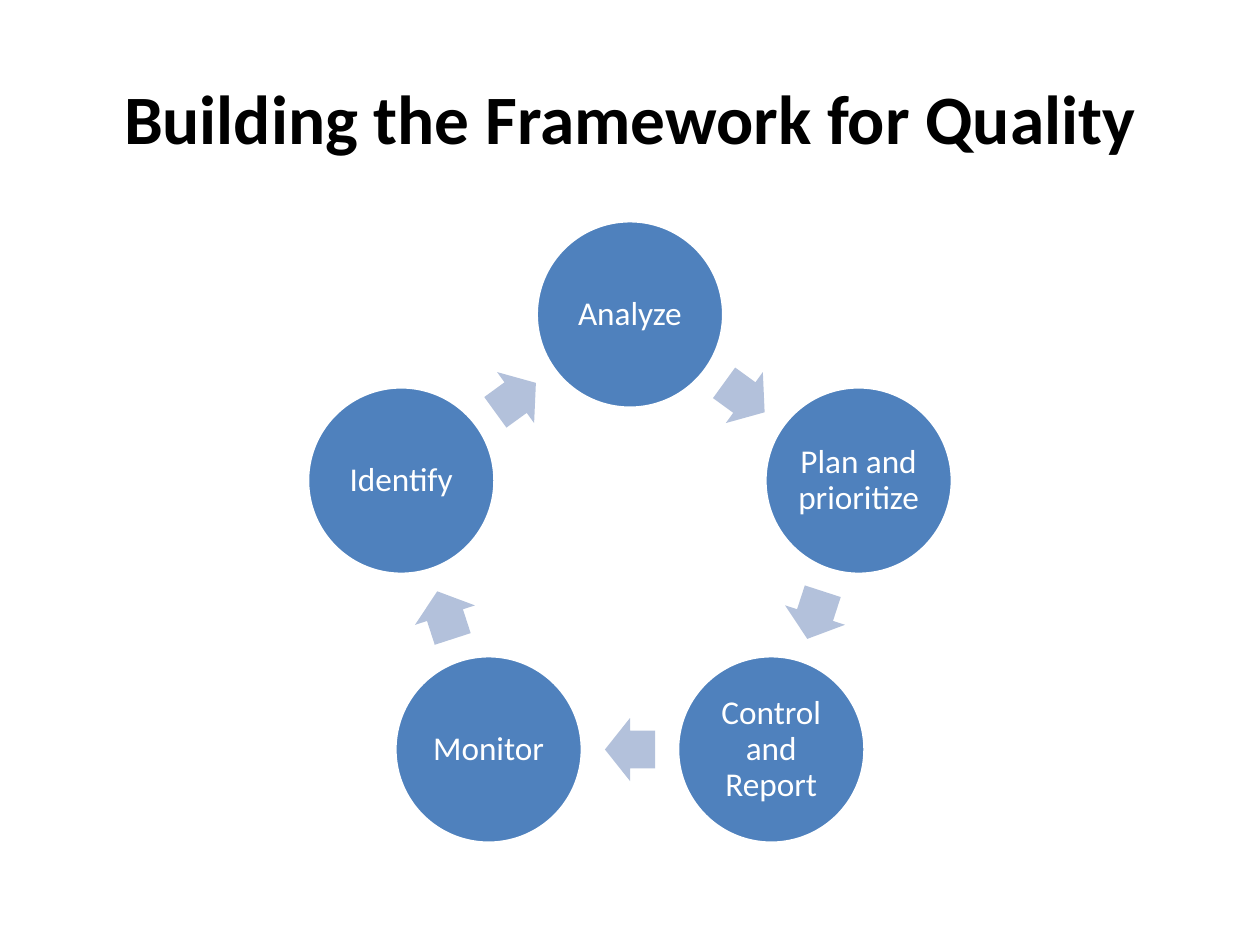
from math import cos, radians, sin

from pptx import Presentation
from pptx.dml.color import RGBColor
from pptx.enum.shapes import MSO_SHAPE
from pptx.enum.text import MSO_ANCHOR, PP_ALIGN
from pptx.util import Cm, Pt

BLUE = RGBColor(0x4F, 0x81, 0xBD)
PALE_BLUE = RGBColor(0xB3, 0xC1, 0xDB)
WHITE = RGBColor(0xFF, 0xFF, 0xFF)
BLACK = RGBColor(0x00, 0x00, 0x00)

STAGES = ["Analyze", "Plan and prioritize", "Control and Report", "Monitor", "Identify"]


def format_text(text_frame, size, color, bold=False):
    text_frame.vertical_anchor = MSO_ANCHOR.MIDDLE
    for paragraph in text_frame.paragraphs:
        paragraph.alignment = PP_ALIGN.CENTER
        for run in paragraph.runs:
            run.font.name = "Calibri"
            run.font.size = Pt(size)
            run.font.bold = bold
            run.font.color.rgb = color


def place_heading(slide, left, top, width, height):
    heading = slide.shapes.title
    heading.left, heading.top, heading.width, heading.height = left, top, width, height
    heading.text_frame.text = "Building the Framework for Quality"
    format_text(heading.text_frame, 39.6, BLACK, bold=True)


def add_centred(slide, preset, x, y, width, height, fill):
    shape = slide.shapes.add_shape(
        preset, int(x - width / 2), int(y - height / 2), width, height)
    shape.shadow.inherit = False
    shape.fill.solid()
    shape.fill.fore_color.rgb = fill
    return shape


def add_stage(slide, name, x, y, diameter):
    stage = add_centred(slide, MSO_SHAPE.OVAL, x, y, diameter, diameter, BLUE)
    stage.line.color.rgb = WHITE
    stage.line.width = Pt(2)
    frame = stage.text_frame
    frame.word_wrap = True
    frame.margin_left = frame.margin_right = Cm(0.07)
    frame.margin_top = frame.margin_bottom = Cm(0.07)
    frame.text = name
    frame.paragraphs[0].line_spacing = 0.9
    format_text(frame, 19, WHITE)


def add_step_arrow(slide, x, y, rotation):
    arrow = add_centred(slide, MSO_SHAPE.RIGHT_ARROW, x, y, Cm(1.01), Cm(1.27), PALE_BLUE)
    arrow.line.fill.background()
    arrow.adjustments[0] = 0.6
    arrow.adjustments[1] = 0.5
    arrow.rotation = rotation


def place_cycle(slide, left, top, width, diameter):
    step = 360 / len(STAGES)
    radius = (width - diameter) / 2 / sin(radians(step))
    arrow_radius = radius * cos(radians(step / 2))
    centre_x = left + width / 2
    centre_y = top + diameter / 2 + radius

    def on_ring(distance, angle):
        turn = radians(angle)
        return centre_x + distance * sin(turn), centre_y - distance * cos(turn)

    for index, name in enumerate(STAGES):
        angle = index * step
        middle = angle + step / 2
        add_stage(slide, name, *on_ring(radius, angle), diameter)
        add_step_arrow(slide, *on_ring(arrow_radius, middle), middle)


def main():
    presentation = Presentation()
    presentation.slide_width = Cm(25.4)
    presentation.slide_height = Cm(19.05)
    slide = presentation.slides.add_slide(presentation.slide_layouts[5])
    place_heading(slide, Cm(1.27), Cm(0.76), Cm(22.86), Cm(3.18))
    place_cycle(slide, Cm(6.2), Cm(4.45), Cm(13), Cm(3.78))
    presentation.save("out.pptx")


if __name__ == "__main__":
    main()
